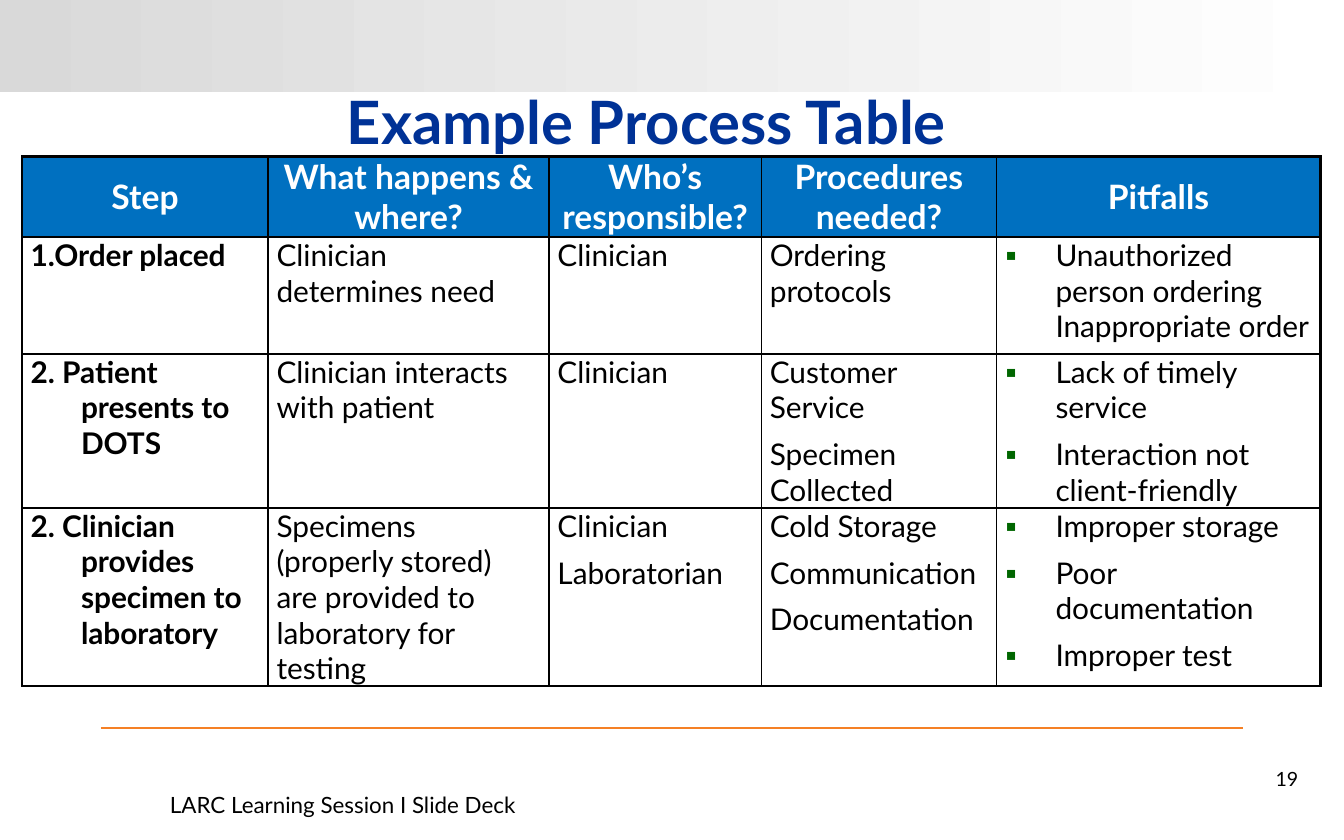
from lxml import etree
from pptx import Presentation
from pptx import util as u
from pptx.dml.color import RGBColor
from pptx.enum import shapes, text
from pptx.oxml import parse_xml
from pptx.oxml.ns import nsdecls, qn

WHITE = RGBColor(0xFF, 0xFF, 0xFF)
BLACK = RGBColor(0, 0, 0)
GREY = RGBColor(0xD9, 0xD9, 0xD9)
ORANGE = RGBColor(0xF5, 0x80, 0x25)
NAVY = RGBColor(0x00, 0x32, 0x96)
BLUE = RGBColor(0x00, 0x70, 0xC0)
GREEN = RGBColor(0x00, 0x66, 0x00)
FONT = "Lato"
Pt = u.Pt


def add_run(paragraph, words, size, color, bold=False):
    run = paragraph.add_run()
    run.text = words
    run.font.name = FONT
    run.font.size = Pt(size)
    run.font.bold = bold
    run.font.color.rgb = color


def add_label(left, top, width, height, side_inset, anchor):
    frame = slide.shapes.add_textbox(Pt(left), Pt(top), Pt(width), Pt(height)).text_frame
    frame.word_wrap = True
    frame.margin_left = frame.margin_right = Pt(side_inset)
    frame.margin_top = frame.margin_bottom = Pt(3.6)
    frame.vertical_anchor = anchor
    return frame.paragraphs[0]


prs = Presentation()
prs.slide_width, prs.slide_height = Pt(720), Pt(450)
slide = prs.slides.add_slide(prs.slide_layouts[6])

band = slide.shapes.add_shape(shapes.MSO_SHAPE.RECTANGLE, 0, 0, Pt(720), Pt(49.2))
band.shadow.inherit = False
band.line.fill.background()
band.fill.gradient()
band.fill.gradient_angle = 0
for stop, color in zip(band.fill.gradient_stops, (GREY, WHITE)):
    stop.color.rgb = color

footer_rule = slide.shapes.add_connector(
    shapes.MSO_CONNECTOR.STRAIGHT, Pt(54), Pt(390), Pt(666), Pt(390))
footer_rule.line.color.rgb = ORANGE
footer_rule.line.width = Pt(1)
etree.SubElement(footer_rule._element.spPr, qn("a:effectLst"))

process = [
    [["Step"], ["What happens & where?"], ["Who’s responsible?"],
     ["Procedures needed?"], ["Pitfalls"]],
    [["1.Order placed"], ["Clinician determines need"], ["Clinician"],
     ["Ordering protocols"], ["Unauthorized person ordering Inappropriate order"]],
    [["2. Patient presents to DOTS"], ["Clinician interacts with patient"], ["Clinician"],
     ["Customer Service", "Specimen Collected"],
     ["Lack of timely service", "Interaction not client-friendly"]],
    [["2. Clinician provides specimen to laboratory"],
     ["Specimens (properly stored) are provided to laboratory for testing"],
     ["Clinician", "Laboratorian"],
     ["Cold Storage", "Communication", "Documentation"],
     ["Improper storage", "Poor documentation", "Improper test"]],
]
column_widths = [131.8, 150.5, 113.8, 126, 173.6]
row_heights = [43.2, 62.6, 82.4, 95.4]
STEP, PITFALLS = 0, len(column_widths) - 1

table = slide.shapes.add_table(
    len(row_heights), len(column_widths), Pt(11.8), Pt(83.8),
    Pt(sum(column_widths)), Pt(sum(row_heights))).table
table.first_row = table.horz_banding = False
for column, width in zip(table.columns, column_widths):
    column.width = Pt(width)
for row, height in zip(table.rows, row_heights):
    row.height = Pt(height)

for r, steps in enumerate(process):
    header = r == 0
    for c, entries in enumerate(steps):
        cell = table.cell(r, c)
        cell.margin_left = Pt(4.6)
        cell.margin_right = Pt(4.6 if header else 5.8)
        cell.margin_top = cell.margin_bottom = 0
        if header:
            cell.fill.solid()
            cell.fill.fore_color.rgb = BLUE
            cell.vertical_anchor = text.MSO_ANCHOR.MIDDLE
        else:
            cell.fill.background()
        borders = {"lnL": 1, "lnR": 1.5 if c == PITFALLS else 1,
                   "lnT": 1.5 if r < 2 else 1, "lnB": 1.5 if header else 1}
        for place, (side, width) in enumerate(borders.items()):
            cell._tc.get_or_add_tcPr().insert(place, parse_xml(
                f'<a:{side} {nsdecls("a")} w="{Pt(width)}"><a:solidFill>'
                f'<a:srgbClr val="{BLACK}"/></a:solidFill></a:{side}>'))

        for i, entry in enumerate(entries):
            paragraph = cell.text_frame.paragraphs[0] if i == 0 else cell.text_frame.add_paragraph()
            if not header and c in (STEP, PITFALLS):
                properties = paragraph._p.get_or_add_pPr()
                properties.set("marL", str(Pt(27)))
                properties.set("indent", str(-Pt(27)))
                if c == PITFALLS:
                    bullet_color = etree.SubElement(properties, qn("a:buClr"))
                    etree.SubElement(bullet_color, qn("a:srgbClr"), val=str(GREEN))
                    etree.SubElement(properties, qn("a:buFont"), typeface=FONT)
                    etree.SubElement(properties, qn("a:buChar"), char="▪")
            if header:
                paragraph.alignment = text.PP_ALIGN.CENTER
            if i > 0:
                paragraph.space_before = Pt(3)
            paragraph.space_after = Pt(3)
            add_run(paragraph, entry, 18 if header else 16,
                    WHITE if header else BLACK, header or c == STEP)

title = add_label(185.8, 47.5, 348, 36.7, 0, text.MSO_ANCHOR.TOP)
title.line_spacing = 0.85
add_run(title, "Example Process Table", 32, NAVY, True)

page_number = add_label(533.5, 406.2, 162, 23.8, 0, text.MSO_ANCHOR.MIDDLE)
page_number.alignment = text.PP_ALIGN.RIGHT
page_number.line_spacing = 0.9
add_run(page_number, "19", 10.5, BLACK)

session = add_label(84, 420.5, 216, 21.6, 7.2, text.MSO_ANCHOR.TOP)
add_run(session, "LARC Learning Session I Slide Deck", 12, BLACK)

prs.save("out.pptx")
